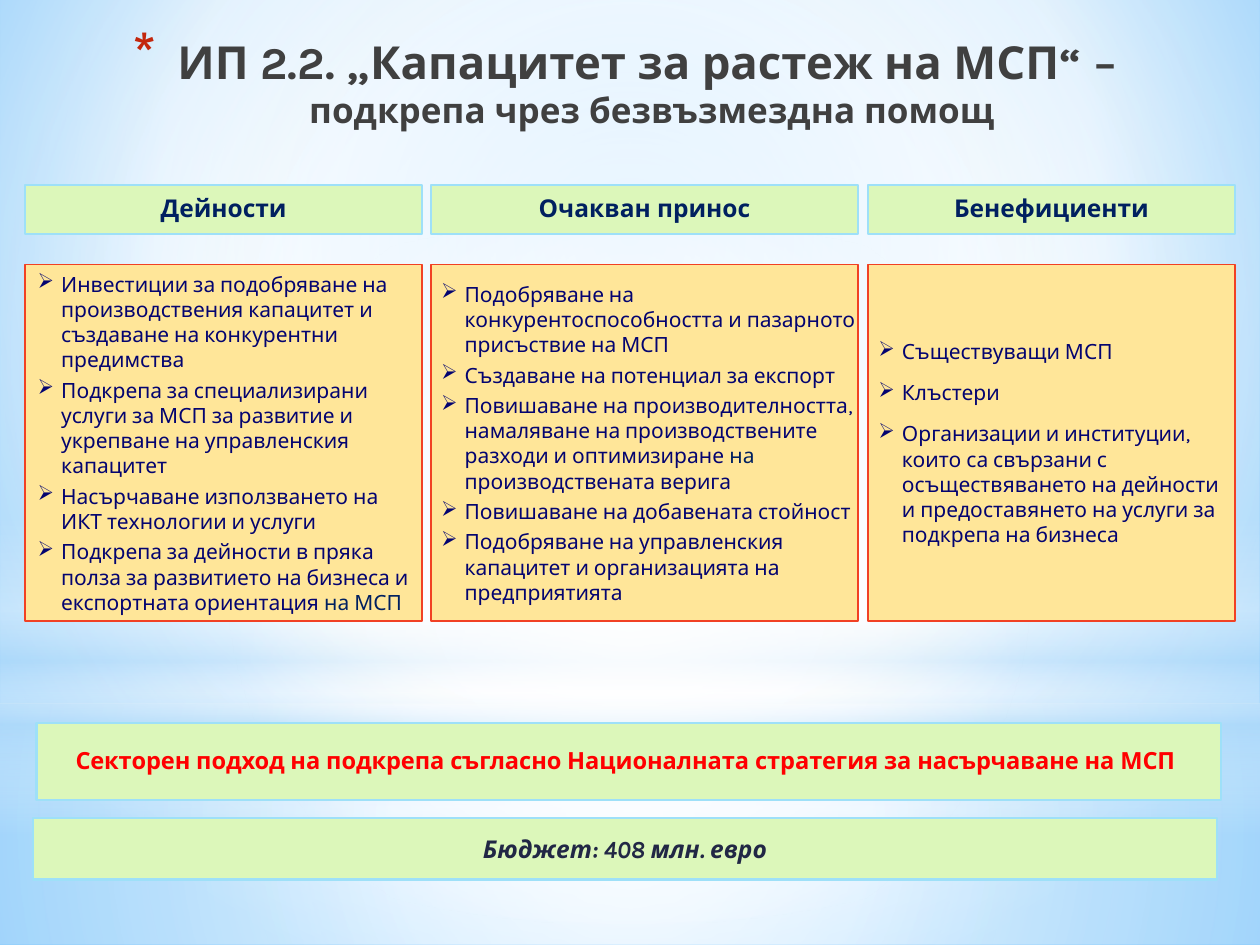
from lxml import etree
from pptx import Presentation
from pptx.dml.color import RGBColor
from pptx.enum.shapes import MSO_SHAPE as SHAPE
from pptx.enum.text import MSO_ANCHOR as ANCHOR, MSO_AUTO_SIZE as AUTO_SIZE, PP_ALIGN as ALIGN
from pptx.oxml import parse_xml
from pptx.oxml.ns import nsdecls, qn
from pptx.util import Pt

FONT = "Karla"
NAVY = RGBColor(0x00, 0x20, 0x60)
INDIGO = RGBColor(0x04, 0x04, 0x70)
SLATE = RGBColor(0x21, 0x27, 0x45)
CHARCOAL = RGBColor(0x40, 0x40, 0x40)
RED = RGBColor(0xFF, 0x00, 0x00)
LIME = RGBColor(0xDC, 0xF7, 0xBA)
SKY = RGBColor(0x9E, 0xE0, 0xF8)
SAND = RGBColor(0xFF, 0xE6, 0x99)
ORANGE = RGBColor(0xF1, 0x41, 0x24)
GREEN_BOX = {"fill": LIME, "outline": SKY, "weight": 1.25}
SAND_BOX = {"fill": SAND, "outline": ORANGE, "weight": 1}

TITLE = [
    ("ИП 2.2. „Капацитет за растеж на МСП“ ", 26),
    ("– ", 24),
    ("\v", 24),
    ("подкрепа чрез безвъзмездна помощ", 20),
]
# Each item is a list of (text, colour) pieces.
COLUMNS = [
    {
        "heading": "Дейности", "left": 14.4, "width": 226.8,
        "insets": (7.2, 3.6, 7.2, 3.6), "before": 0,
        "items": [
            [("Инвестиции за подобряване на производствения капацитет и създаване на "
              "конкурентни предимства", INDIGO)],
            [("Подкрепа за специализирани услуги за МСП за развитие и укрепване на "
              "управленския капацитет", INDIGO)],
            [("Насърчаване използването на ИКТ технологии и услуги", INDIGO)],
            [("Подкрепа за дейности в пряка полза за развитието на бизнеса и "
              "експортната ориентация ", INDIGO), ("на МСП", NAVY)],
        ],
    },
    {
        "heading": "Очакван принос", "left": 246.2, "width": 244.1,
        "insets": (5.8, 0, 0, 0), "before": 0,
        "items": [
            [("Подобряване на конкурентоспособността и пазарното присъствие на МСП", INDIGO)],
            [("Създаване на потенциал за експорт", INDIGO)],
            [("Повишаване на производителността, намаляване на производствените разходи и "
              "оптимизиране ", INDIGO), ("на ", NAVY), ("производствената верига", INDIGO)],
            [("Повишаване на добавената стойност", INDIGO)],
            [("Подобряване на управленския капацитет и организацията на предприятията", INDIGO)],
        ],
    },
    {
        "heading": "Бенефициенти", "left": 496.1, "width": 209.5,
        "insets": (5.8, 3.6, 0, 3.6), "before": 6,
        "items": [
            [("Съществуващи МСП", INDIGO)],
            [("Клъстери", INDIGO)],
            [("Организации и институции, които са свързани с осъществяването на дейности и "
              "предоставянето на услуги за подкрепа на бизнеса", INDIGO)],
        ],
    },
]
BANNERS = [
    ("Секторен подход на подкрепа съгласно Националната стратегия за насърчаване на МСП ",
     (20.9, 413.3, 676.8, 43.9), {"size": Pt(13.5), "bold": True}, RED, {"line_spacing": 0.9}),
    ("Бюджет: 408 млн. евро",
     (18.7, 467.3, 676.8, 35.3), {"size": Pt(14), "bold": True, "italic": True}, SLATE,
     {"space_before": Pt(6)}),
]
HEADING_TOP, HEADING_HEIGHT = 105.8, 28.1
LIST_TOP, LIST_HEIGHT = 151.2, 203.8

# Gradient stops are (position %, colour, opacity %).
CENTRE = (50, 50, 50, 50)
BACKDROP = ([(0, "9ED5FF", 100), (60, "FFFFFF", 100), (100, "5BB9FF", 100)], (20, 10, 20, 60))
GLOWS = [
    (SHAPE.RECTANGLE, (0, 401.8, 720, 138.2),
     [(0, "FFFFFF", 91), (37, "FFFFFF", 76), (100, "B4DCFA", 79)], CENTRE),
    (SHAPE.RECTANGLE, (0, 0, 720, 401.8),
     [(0, "FFFFFF", 89), (48, "FFFFFF", 62), (100, "B4DCFA", 79)], CENTRE),
    (SHAPE.RECTANGLE, (0, 296.6, 720, 180),
     [(0, "FFFFFF", 0), (29, "FFFFFF", 30), (45, "B4DCFA", 40), (55, "FFFFFF", 26),
      (65, "B4DCFA", 60), (100, "FFFFFF", 0)], None),
    (SHAPE.OVAL, (0, 126, 720, 401.8), [(0, "FFFFFF", 100), (56, "FFFFFF", 0)], CENTRE),
]


def set_all(target, values):
    for name, value in values.items():
        setattr(target, name, value)


def apply_gradient(properties, stops, focus):
    """Swap the solid fill for a circular gradient, or a vertical one without focus."""
    stop_xml = "".join(
        f'<a:gs pos="{pos * 1000}"><a:srgbClr val="{colour}">'
        f'<a:alpha val="{opacity * 1000}"/></a:srgbClr></a:gs>'
        for pos, colour, opacity in stops)
    if focus:
        sides = " ".join(f'{side}="{value * 1000}"' for side, value in zip("ltrb", focus))
        direction = f'<a:path path="circle"><a:fillToRect {sides}/></a:path>'
    else:
        direction = '<a:lin ang="5400000" scaled="0"/>'
    gradient = parse_xml(f'<a:gradFill {nsdecls("a")} rotWithShape="1">'
                         f'<a:gsLst>{stop_xml}</a:gsLst>{direction}</a:gradFill>')
    properties.replace(properties.find(qn("a:solidFill")), gradient)


def add_bullet(paragraph, char, indent, colour=None, percent=100):
    properties = paragraph._p.get_or_add_pPr()
    properties.set("marL", str(Pt(indent)))
    properties.set("indent", str(-Pt(indent)))
    if colour:
        holder = etree.SubElement(properties, qn("a:buClr"))
        etree.SubElement(holder, qn("a:srgbClr"), val=colour)
    etree.SubElement(properties, qn("a:buSzPct"), val=str(percent * 1000))
    etree.SubElement(properties, qn("a:buChar"), char=char)


def add_run(paragraph, text, colour, values):
    run = paragraph.add_run()
    run.text = text
    set_all(run.font, {"name": FONT, **values})
    run.font.color.rgb = colour


def add_box(slide, kind, place, fill, outline=None, weight=0):
    box = slide.shapes.add_shape(kind, *map(Pt, place))
    box.shadow.inherit = False
    box.fill.solid()
    box.fill.fore_color.rgb = fill
    if outline:
        box.line.color.rgb = outline
        box.line.width = Pt(weight)
    else:
        box.line.fill.background()
    return box


def add_label(slide, text, place, font_values, colour, spacing):
    label = add_box(slide, SHAPE.RECTANGLE, place, **GREEN_BOX)
    label.text_frame.vertical_anchor = ANCHOR.MIDDLE
    paragraph = label.text_frame.paragraphs[0]
    set_all(paragraph, {"alignment": ALIGN.CENTER, **spacing})
    add_run(paragraph, text, colour, font_values)


def add_list(slide, column):
    place = (column["left"], LIST_TOP, column["width"], LIST_HEIGHT)
    frame = add_box(slide, SHAPE.RECTANGLE, place, **SAND_BOX).text_frame
    sides = ("margin_left", "margin_top", "margin_right", "margin_bottom")
    set_all(frame, dict(zip(sides, map(Pt, column["insets"]))))
    frame.vertical_anchor = ANCHOR.MIDDLE
    for number, pieces in enumerate(column["items"]):
        paragraph = frame.add_paragraph() if number else frame.paragraphs[0]
        set_all(paragraph, {"alignment": ALIGN.LEFT, "space_before": Pt(column["before"]),
                            "space_after": Pt(3)})
        add_bullet(paragraph, "➢", 13.5)
        for text, colour in pieces:
            add_run(paragraph, text, colour, {"size": Pt(12)})


def add_title(slide):
    title = slide.shapes.title
    slide.shapes._spTree.append(title._element)  # in front of the glows
    set_all(title, {"left": Pt(0), "top": Pt(0), "width": Pt(720), "height": Pt(94.3)})
    set_all(title.text_frame, {"vertical_anchor": ANCHOR.MIDDLE, "word_wrap": True,
                               "auto_size": AUTO_SIZE.NONE})
    paragraph = title.text_frame.paragraphs[0]
    paragraph.alignment = ALIGN.CENTER
    add_bullet(paragraph, "*", 25.2, "C3260C", 128)
    for text, size in TITLE:
        if text == "\v":
            paragraph.add_line_break()
        else:
            add_run(paragraph, text, CHARCOAL, {"size": Pt(size), "bold": True})


def main():
    deck = Presentation()
    set_all(deck, {"slide_width": Pt(720), "slide_height": Pt(540)})
    slide = deck.slides.add_slide(deck.slide_layouts[5])
    slide.background.fill.solid()
    apply_gradient(slide._element.cSld.bg.bgPr, *BACKDROP)
    for kind, place, stops, focus in GLOWS:
        glow = add_box(slide, kind, place, SKY)
        apply_gradient(glow._element.spPr, stops, focus)
    add_title(slide)
    for column in COLUMNS:
        place = (column["left"], HEADING_TOP, column["width"], HEADING_HEIGHT)
        add_label(slide, column["heading"], place, {"size": Pt(14), "bold": True}, NAVY,
                  {"line_spacing": 0.9})
        add_list(slide, column)
    for banner in BANNERS:
        add_label(slide, *banner)
    deck.save("out.pptx")


if __name__ == "__main__":
    main()
